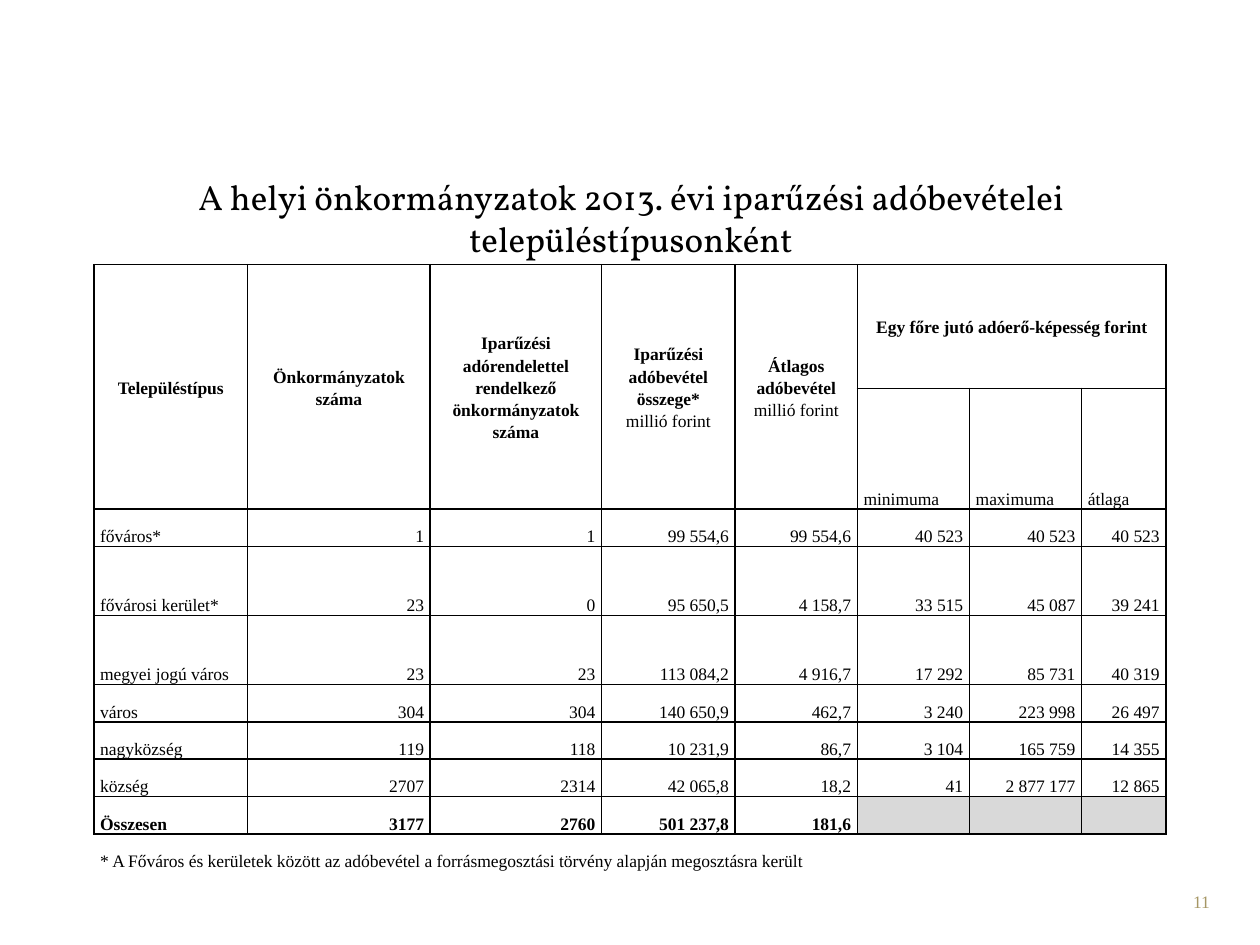
from dataclasses import dataclass

from lxml import etree
from pptx import Presentation
from pptx.dml.color import RGBColor
from pptx.enum.text import MSO_ANCHOR, MSO_AUTO_SIZE, PP_ALIGN
from pptx.oxml.ns import qn
from pptx.util import Inches, Pt

LEFT, CENTER, RIGHT = PP_ALIGN.LEFT, PP_ALIGN.CENTER, PP_ALIGN.RIGHT
TOP, MIDDLE, BOTTOM = MSO_ANCHOR.TOP, MSO_ANCHOR.MIDDLE, MSO_ANCHOR.BOTTOM
NO_FIT = MSO_AUTO_SIZE.NONE

SLIDE_WIDTH, SLIDE_HEIGHT = Inches(10), Inches(7.5)
COLORS = {"text": "000000", "number": "A69765", "blank": "D9D9D9"}
TITLE_FONT, BODY_FONT = "Vollkorn", "Times New Roman"
PLAIN_STYLE = "{2D5ABB26-0587-4C30-8999-92F81FD0307C}"
ALL_SIDES = ("L", "R", "T", "B")

COLUMN_INCHES = [1.22, 1.45, 1.36, 1.06, 0.97, 0.89, 0.89, 0.67]
SINGLE, DOUBLE = 21.4, 39.4
ROW_POINTS = [70.7, DOUBLE, SINGLE, DOUBLE, DOUBLE] + [SINGLE] * 5
UNIT = "millió forint"
TITLE = "A helyi önkormányzatok 2013. évi iparűzési adóbevételei településtípusonként"
FOOTNOTE = (
    "* A Főváros és kerületek között az adóbevétel a forrásmegosztási "
    "törvény alapján megosztásra került"
)


@dataclass
class Region:
    """Place on the slide, in percent of its width and height."""

    left: float
    top: float
    width: float
    height: float

    def place(self, shape) -> None:
        """Move and size a shape to this region."""
        shape.left, shape.width = (int(SLIDE_WIDTH * share / 100) for share in (self.left, self.width))
        shape.top, shape.height = (int(SLIDE_HEIGHT * share / 100) for share in (self.top, self.height))


@dataclass
class Entry:
    """Cell text with its grid position, span and style."""

    row: int
    column: int
    lines: tuple[str, ...]
    align: PP_ALIGN = RIGHT
    anchor: MSO_ANCHOR = BOTTOM
    bold: bool = False
    rows: int = 1
    columns: int = 1


TITLE_REGION = Region(5.1, 19.6, 90, 16.67)
TABLE_REGION = Region(7.45, 28, 85, 58.8)
NUMBER_REGION = Region(73.7, 93.6, 23.3, 5.33)

HEADINGS = [
    ("Településtípus",),
    ("Önkormányzatok száma",),
    ("Iparűzési adórendelettel rendelkező önkormányzatok száma",),
    ("Iparűzési adóbevétel összege*", UNIT),
    ("Átlagos adóbevétel", UNIT),
]
SUBHEADINGS = ["minimuma", "maximuma", "átlaga"]
RECORDS = [
    ["főváros*", "1", "1", "99 554,6", "99 554,6", "40 523", "40 523", "40 523"],
    ["fővárosi kerület*", "23", "0", "95 650,5", "4 158,7", "33 515", "45 087", "39 241"],
    ["megyei jogú város", "23", "23", "113 084,2", "4 916,7", "17 292", "85 731", "40 319"],
    ["város", "304", "304", "140 650,9", "462,7", "3 240", "223 998", "26 497"],
    ["nagyközség", "119", "118", "10 231,9", "86,7", "3 104", "165 759", "14 355"],
    ["község", "2707", "2314", "42 065,8", "18,2", "41", "2 877 177", "12 865"],
    ["Összesen", "3177", "2760", "501 237,8", "181,6"],
]
HEADER_ROWS = 2
TOTAL_ROW = HEADER_ROWS + len(RECORDS) - 1
FOOTNOTE_ROW = TOTAL_ROW + 1


def style_paragraph(paragraph, font: str, size: float, color: str, align: PP_ALIGN, bold: bool = False) -> None:
    """Set the font and alignment of a paragraph."""
    paragraph.alignment = align
    paragraph.font.name = font
    paragraph.font.size = Pt(size)
    paragraph.font.bold = bold
    paragraph.font.color.rgb = RGBColor.from_string(COLORS[color])


def draw_borders(cell, sides: tuple[str, ...]) -> None:
    """Draw one-point lines on the given sides and none on the others."""
    properties = cell._tc.get_or_add_tcPr()
    for side in ALL_SIDES:
        line = etree.SubElement(properties, qn(f"a:ln{side}"), w=str(Pt(1)))
        if side in sides:
            fill = etree.SubElement(line, qn("a:solidFill"))
            etree.SubElement(fill, qn("a:srgbClr"), val=COLORS["text"])
        else:
            etree.SubElement(line, qn("a:noFill"))


def table_entries() -> list[Entry]:
    """List every text of the table with its place in the grid."""
    first_rate = len(HEADINGS)
    entries = [
        Entry(0, column, lines, CENTER, MIDDLE, True, rows=HEADER_ROWS)
        for column, lines in enumerate(HEADINGS)
    ]
    entries.append(
        Entry(0, first_rate, ("Egy főre jutó adóerő-képesség forint",), CENTER, MIDDLE, True,
              columns=len(SUBHEADINGS))
    )
    entries += [Entry(1, first_rate + index, (text,), LEFT) for index, text in enumerate(SUBHEADINGS)]
    for row, record in enumerate(RECORDS, HEADER_ROWS):
        entries += [
            Entry(row, column, (text,), RIGHT if column else LEFT, bold=row == TOTAL_ROW)
            for column, text in enumerate(record)
        ]
    entries.append(Entry(FOOTNOTE_ROW, 0, (FOOTNOTE,), LEFT, columns=len(COLUMN_INCHES)))
    return entries


def write_entry(table, entry: Entry) -> None:
    """Merge the span of an entry and write its lines."""
    cell = table.cell(entry.row, entry.column)
    if entry.rows * entry.columns > 1:
        cell.merge(table.cell(entry.row + entry.rows - 1, entry.column + entry.columns - 1))
    cell.vertical_anchor = entry.anchor
    frame = cell.text_frame
    frame.text = "\n".join(entry.lines)
    for paragraph, line in zip(frame.paragraphs, entry.lines):
        paragraph.line_spacing = 1.15
        style_paragraph(paragraph, BODY_FONT, 10, "text", entry.align, entry.bold and line != UNIT)


def add_revenue_table(page) -> None:
    """Add the table of tax revenues by settlement type."""
    frame = page.shapes.add_table(len(ROW_POINTS), len(COLUMN_INCHES), 0, 0, SLIDE_WIDTH, SLIDE_HEIGHT)
    table = frame.table
    table.first_row = table.horz_banding = False
    table._tbl.tblPr.find(qn("a:tableStyleId")).text = PLAIN_STYLE
    for column, width in zip(table.columns, COLUMN_INCHES):
        column.width = Inches(width)
    for row, height in zip(table.rows, ROW_POINTS):
        row.height = Pt(height)
    TABLE_REGION.place(frame)
    for row in range(len(ROW_POINTS)):
        for column in range(len(COLUMN_INCHES)):
            cell = table.cell(row, column)
            cell.margin_left = cell.margin_right = Inches(0.05)
            cell.margin_top = cell.margin_bottom = 0
            draw_borders(cell, ("T",) if row == FOOTNOTE_ROW else ALL_SIDES)
            if row == TOTAL_ROW and column >= len(RECORDS[-1]):
                cell.fill.solid()
                cell.fill.fore_color.rgb = RGBColor.from_string(COLORS["blank"])
                style_paragraph(cell.text_frame.paragraphs[0], BODY_FONT, 10, "text", RIGHT)
            else:
                cell.fill.background()
    for entry in table_entries():
        write_entry(table, entry)


def write_title(page) -> None:
    """Place and format the title."""
    title = page.shapes.title
    TITLE_REGION.place(title)
    frame = title.text_frame
    frame.text = TITLE
    frame.word_wrap = True
    frame.auto_size = NO_FIT
    frame.vertical_anchor = BOTTOM
    frame.margin_top, frame.margin_bottom = 0, Inches(0.66)
    style_paragraph(frame.paragraphs[0], TITLE_FONT, 20, "text", CENTER)


def add_page_number(page) -> None:
    """Add the page number at the lower right."""
    box = page.shapes.add_textbox(0, 0, 0, 0)
    NUMBER_REGION.place(box)
    frame = box.text_frame
    frame.word_wrap = True
    frame.vertical_anchor = TOP
    frame.text = "11"
    style_paragraph(frame.paragraphs[0], BODY_FONT, 10, "number", RIGHT)


def main() -> None:
    """Build the slide and save it."""
    deck = Presentation()
    deck.slide_width, deck.slide_height = SLIDE_WIDTH, SLIDE_HEIGHT
    page = deck.slides.add_slide(deck.slide_layouts.get_by_name("Title Only"))
    add_page_number(page)
    write_title(page)
    add_revenue_table(page)
    deck.save("out.pptx")


if __name__ == "__main__":
    main()
